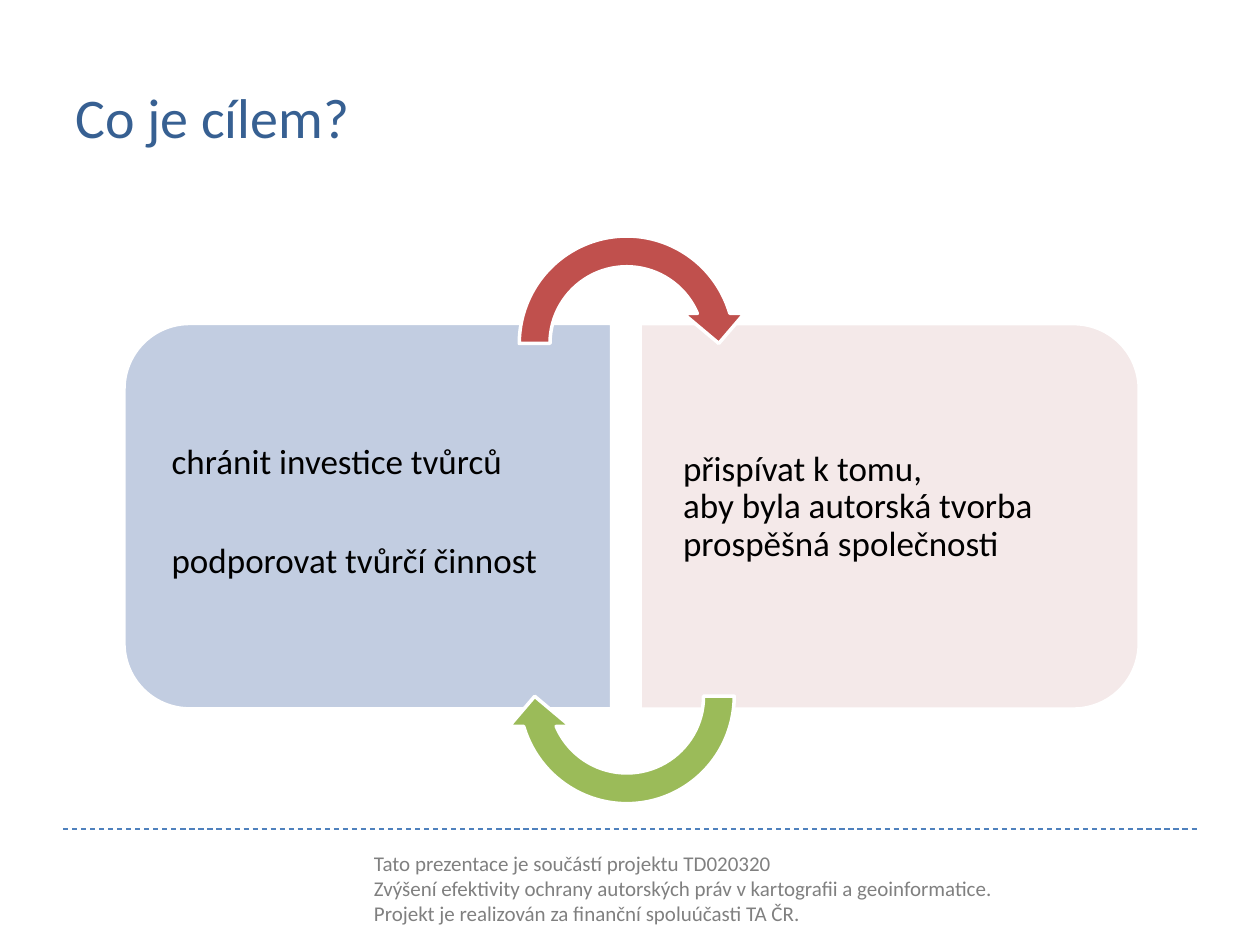
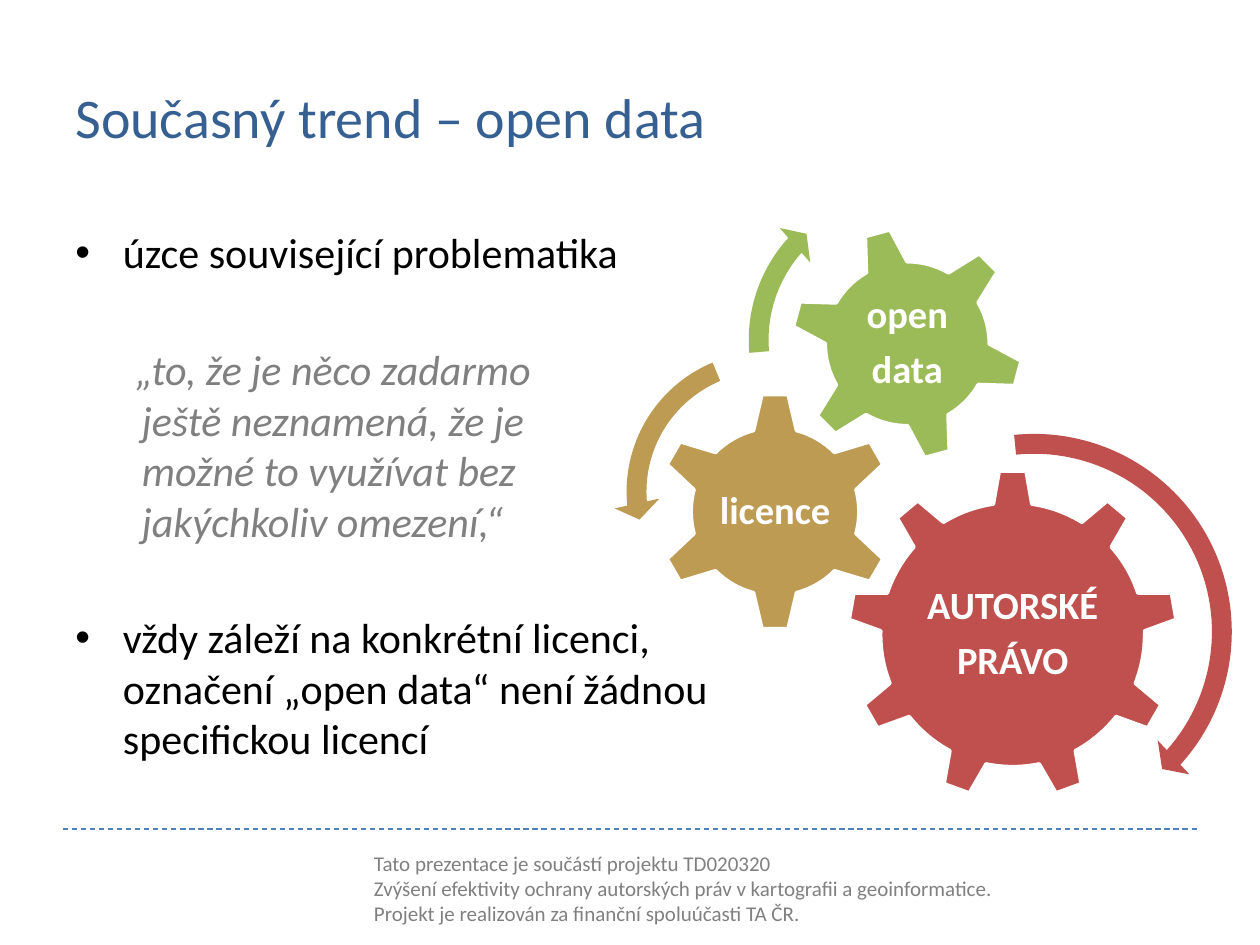
from dataclasses import dataclass
from typing import NamedTuple, Optional

from lxml import etree
from pptx import Presentation
from pptx import util as u
from pptx.dml.color import RGBColor
from pptx.enum import dml, shapes, text
from pptx.oxml import ns

Cm, Pt = u.Cm, u.Pt
Preset = shapes.MSO_SHAPE
Anchor = text.MSO_ANCHOR
Align = text.PP_ALIGN


@dataclass(frozen=True)
class Theme:
    font: str = "Calibri"
    title: str = "376092"
    rule: str = "4F81BD"
    muted: str = "808080"
    ink: str = "000000"
    white: str = "FFFFFF"
    red: str = "C0504D"
    green: str = "9BBB59"
    ochre: str = "BD9B53"
    pale_blue: str = "C2CDE1"
    pale_pink: str = "F4E9E9"
    title_size: int = 32
    body_size: int = 24
    gear_size: int = 22
    panel_size: int = 20
    footer_size: int = 12


THEME = Theme()


class Box(NamedTuple):
    """Left, top, width and height in centimetres."""
    left: float
    top: float
    width: float
    height: float

    def lengths(self) -> list:
        return [Cm(side) for side in self]


class Style(NamedTuple):
    size: int
    color: str
    bold: bool = False
    italic: bool = False


class Para(NamedTuple):
    """Paragraph with gap before in points and indents in centimetres."""
    words: str
    style: Style
    before: float = 0
    indent: float = 0
    first: float = 0
    bullet: str = ""


class Arc(NamedTuple):
    """Circular arrow: thickness and head in percent, angles in degrees."""
    left: float
    top: float
    side: float
    color: str
    thickness: float
    head_angle: float
    end: float
    start: float
    head: float
    preset: Preset = Preset.CIRCULAR_ARROW
    rotation: float = 0
    outlined: bool = False


class Gear(NamedTuple):
    left: float
    top: float
    side: float
    color: str
    preset: Preset
    label: list
    rotation: float = 0


class Panel(NamedTuple):
    box: Box
    rotation: float
    color: str
    words_box: Box
    words: list


TITLE = Style(THEME.title_size, THEME.title)
FOOTER = Style(THEME.footer_size, THEME.muted)
PANEL = Style(THEME.panel_size, THEME.ink)
BODY = Style(THEME.body_size, THEME.ink)
QUOTE = Style(THEME.body_size, THEME.muted, italic=True)
GEAR = Style(THEME.gear_size, THEME.white, bold=True)

FOOTER_LINES = [
    "Tato prezentace je součástí projektu TD020320",
    "Zvýšení efektivity ochrany autorských práv v kartografii a geoinformatice.",
    "Projekt je realizován za finanční spoluúčasti TA ČR.",
]

PANELS = [
    Panel(Box(3.53, 5.49, 7.77, 9.83), 270, THEME.pale_blue, Box(3.46, 8.95, 8.6, 3.6),
          [Para("chránit investice tvůrců", PANEL),
           Para("podporovat tvůrčí činnost", PANEL, before=35)]),
    Panel(Box(14.05, 5.38, 7.77, 10.06), 90, THEME.pale_pink, Box(13.77, 9.09, 8.8, 2.6),
          [Para("přispívat k tomu,\vaby byla autorská tvorba\vprospěšná společnosti", PANEL)]),
]

CYCLE_ARCS = [
    Arc(10.16, top, 4.95, color, 12.5, 19.04, 340.96, 180, 12.5,
        rotation=rotation, outlined=True)
    for top, color, rotation in [(4.45, THEME.red, 0), (11.56, THEME.green, 180)]
]

GEARS = [
    Gear(17.09, 9.47, 6.65, THEME.red, Preset.GEAR_9, ["AUTORSKÉ", "PRÁVO"]),
    Gear(13.21, 7.9, 4.83, THEME.ochre, Preset.GEAR_6, ["licence"]),
    Gear(15.93, 4.57, 4.72, THEME.green, Preset.GEAR_6, ["open", "data"], 345),
]

GEAR_ARCS = [
    Arc(16.59, 8.48, 8.51, THEME.red, 4.7, 4.98, 42, 264.23, 5.5),
    Arc(12.37, 6.83, 6.17, THEME.ochre, 6.5, 7.17, 174.82, 247.3, 7.5,
        Preset.LEFT_CIRCULAR_ARROW),
    Arc(14.83, 3.53, 6.65, THEME.green, 6, 6.57, 221.9, 175.14, 7),
]

BODY_PARAS = [
    Para("úzce související problematika", BODY, indent=0.96, first=-0.96, bullet="•"),
    Para("„to, že je něco zadarmo\vještě neznamená, že je\vmožné to využívat bez\v"
         "jakýchkoliv omezení,“", QUOTE, before=38, indent=1.34, first=-0.13),
    Para("vždy záleží na konkrétní licenci,\voznačení „open data“ není žádnou\v"
         "specifickou licencí", BODY, before=38, indent=0.96, first=-0.96, bullet="•"),
]


def apply(target, values: dict) -> None:
    for attribute, value in values.items():
        setattr(target, attribute, value)


def set_bullet(paragraph, para: Para) -> None:
    properties = paragraph._p.get_or_add_pPr()
    properties.set("marL", str(Cm(para.indent)))
    properties.set("indent", str(Cm(para.first)))
    if para.bullet:
        etree.SubElement(properties, ns.qn("a:buFont")).set("typeface", "Arial")
        etree.SubElement(properties, ns.qn("a:buChar")).set("char", para.bullet)


def add_text(slide, box: Box, paras: list, *, anchor=Anchor.TOP, align=Align.LEFT,
             spacing: float = 1, inset: Optional[tuple] = None, wrap: bool = True) -> None:
    frame = slide.shapes.add_textbox(*box.lengths()).text_frame
    apply(frame, {"word_wrap": wrap, "vertical_anchor": anchor})
    if inset is not None:
        across, down = map(Cm, inset)
        apply(frame, {"margin_left": across, "margin_right": across,
                      "margin_top": down, "margin_bottom": down})
    for index, para in enumerate(paras):
        paragraph = frame.add_paragraph() if index else frame.paragraphs[0]
        paragraph.text = para.words
        set_bullet(paragraph, para)
        apply(paragraph, {"alignment": align, "line_spacing": spacing})
        if para.before:
            paragraph.space_before = Pt(para.before)
        for run in paragraph.runs:
            apply(run.font, {"name": THEME.font, "size": Pt(para.style.size),
                             "bold": para.style.bold, "italic": para.style.italic})
            run.font.color.rgb = RGBColor.from_string(para.style.color)


def add_filled(slide, preset: Preset, box: Box, color: str, rotation: float = 0,
               outlined: bool = True):
    shape = slide.shapes.add_shape(preset, *box.lengths())
    shape.rotation = rotation
    shape.shadow.inherit = False
    shape.fill.solid()
    shape.fill.fore_color.rgb = RGBColor.from_string(color)
    if outlined:
        shape.line.color.rgb = RGBColor.from_string(THEME.white)
        shape.line.width = Pt(2)
    else:
        shape.line.fill.background()
    return shape


def add_arc(slide, arc: Arc) -> None:
    box = Box(arc.left, arc.top, arc.side, arc.side)
    shape = add_filled(slide, arc.preset, box, arc.color, arc.rotation, arc.outlined)
    # Angles are stored in 60000ths of a degree, adjustments in 100000ths.
    adjustments = [arc.thickness / 100, arc.head_angle * 0.6, arc.end * 0.6,
                   arc.start * 0.6, arc.head / 100]
    for index, value in enumerate(adjustments):
        shape.adjustments[index] = value


def add_gear(slide, gear: Gear) -> None:
    box = Box(gear.left, gear.top, gear.side, gear.side)
    add_filled(slide, gear.preset, box, gear.color, gear.rotation)
    label = [Para(words, GEAR, before=7.7 if index else 0)
             for index, words in enumerate(gear.label)]
    add_text(slide, box, label, anchor=Anchor.MIDDLE, align=Align.CENTER,
             spacing=0.9, inset=(0.08, 0.08))


def add_panel(slide, panel: Panel) -> None:
    shape = add_filled(slide, Preset.ROUND_2_SAME_RECTANGLE, panel.box, panel.color,
                       panel.rotation)
    shape.adjustments[0] = 0.17
    add_text(slide, panel.words_box, panel.words, spacing=0.9, inset=(0, 0))


def add_titled_slide(deck, title: str):
    """Blank slide with the shared rule, footer and title."""
    slide = deck.slides.add_slide(deck.slide_layouts[6])
    rule = slide.shapes.add_connector(shapes.MSO_CONNECTOR.STRAIGHT,
                                      Cm(1.27), Cm(16.71), Cm(24.13), Cm(16.71))
    rule.line.color.rgb = RGBColor.from_string(THEME.rule)
    apply(rule.line, {"width": Pt(0.75), "dash_style": dml.MSO_LINE.DASH})
    etree.SubElement(rule._element.spPr, ns.qn("a:effectLst"))
    add_text(slide, Box(7.29, 17.02, 17.2, 1.8),
             [Para(words, FOOTER) for words in FOOTER_LINES])
    add_text(slide, Box(1.27, 0.76, 22.86, 3.18), [Para(title, TITLE)],
             anchor=Anchor.MIDDLE)
    return slide


def build_goal(deck) -> None:
    slide = add_titled_slide(deck, "Co je cílem?")
    for panel in PANELS:
        add_panel(slide, panel)
    for arc in CYCLE_ARCS:
        add_arc(slide, arc)


def build_trend(deck) -> None:
    slide = add_titled_slide(deck, "Současný trend – open data")
    for gear in GEARS:
        add_gear(slide, gear)
    for arc in GEAR_ARCS:
        add_arc(slide, arc)
    add_text(slide, Box(1.27, 4.45, 22.86, 12.09), BODY_PARAS)


def main() -> None:
    deck = Presentation()
    apply(deck, {"slide_width": Cm(25.4), "slide_height": Cm(19.05)})
    build_goal(deck)
    build_trend(deck)
    deck.save("out.pptx")


if __name__ == "__main__":
    main()
